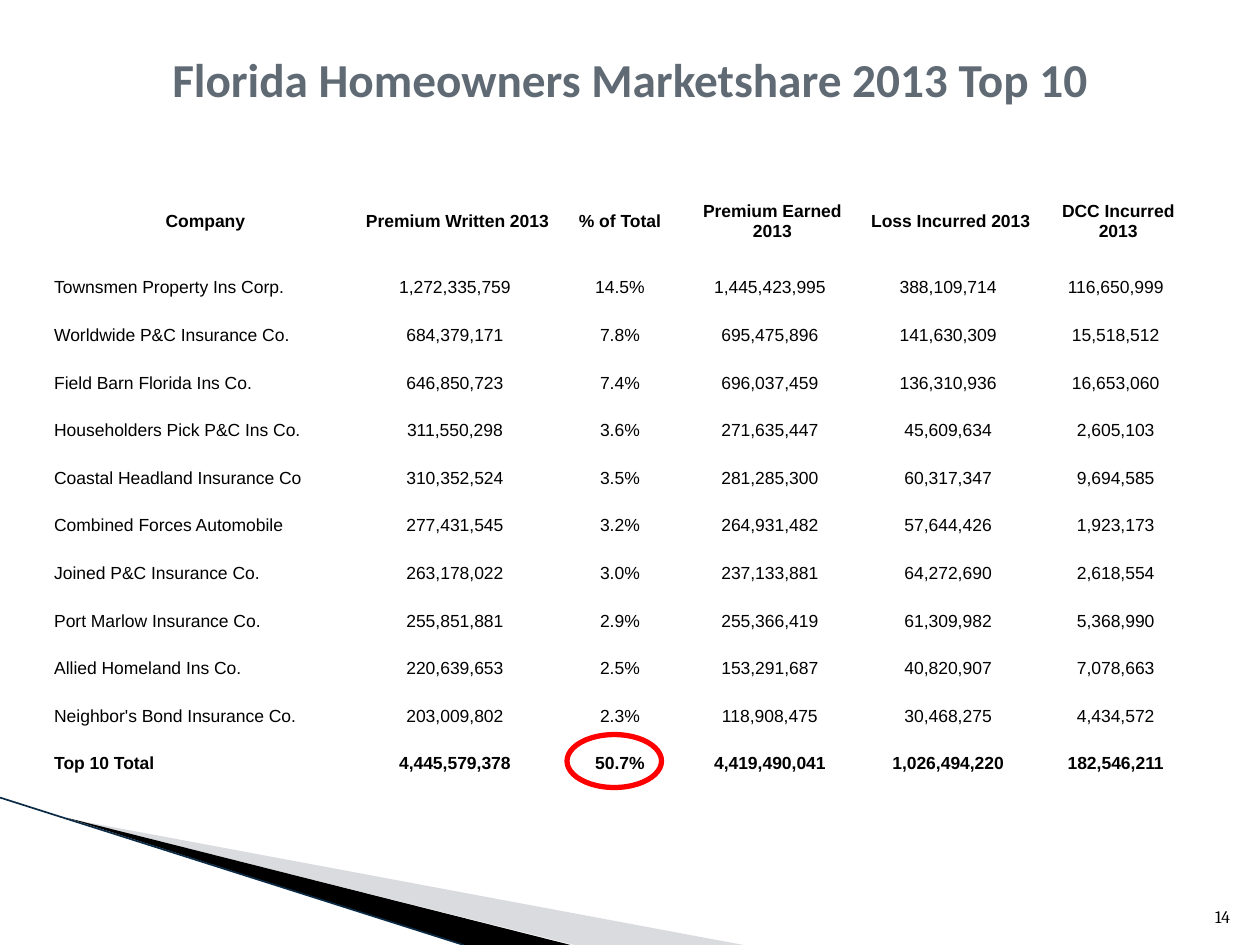
"""Build the Florida homeowners market share slide."""
from dataclasses import dataclass

from lxml.etree import SubElement as Sub
from pptx import Presentation
from pptx.dml.color import RGBColor as Rgb
from pptx.enum.shapes import MSO_CONNECTOR as Link, MSO_SHAPE as Kind
from pptx.enum.text import MSO_ANCHOR as Anchor, PP_ALIGN as Align
from pptx.oxml.ns import qn
from pptx.util import Inches, Pt


@dataclass(frozen=True)
class Theme:
    """Colours, fonts and type sizes."""
    ink: str = "000000"
    slate: str = "606A74"
    mist: str = "A1A6AF"
    navy: str = "0A2A45"
    red: str = "FF0000"
    head: str = "Calibri"
    body: str = "Arial"
    foot: str = "Cambria"
    big: int = 27
    small: int = 10


def unit(num):
    """Turn grid steps of a tenth of an inch into a length."""
    return Inches(num / 10)


def put(frame, text, font, size, tint, bold=False, align=Align.CENTER):
    """Write one formatted paragraph into a text frame."""
    para = frame.paragraphs[0]
    para.alignment = align
    run = para.add_run()
    run.text = text
    run.font.name, run.font.size, run.font.bold = font, Pt(size), bold
    run.font.color.rgb = Rgb.from_string(tint)


class Deck:
    """Hold the style and the current slide."""

    def __init__(self, theme):
        """Open a deck with one title-only slide."""
        self.theme = theme
        self.show = Presentation()
        self.show.slide_width, self.show.slide_height = unit(100), unit(75)
        self.slide = self.show.slides.add_slide(self.show.slide_layouts[5])

    def title(self, text, box):
        """Place and fill the title."""
        shape = self.slide.shapes.title
        shape.left, shape.top, shape.width, shape.height = map(unit, box)
        frame = shape.text_frame
        frame.margin_left = frame.margin_right = unit(3)
        frame.margin_top = frame.margin_bottom = unit(3)
        frame.vertical_anchor = Anchor.MIDDLE
        frame.word_wrap = True
        put(frame, text, self.theme.head, self.theme.big, self.theme.slate, bold=True)

    def wedge(self, points, tint, alpha=100):
        """Draw a filled outline without a border."""
        first, *rest = [(unit(x), unit(y)) for x, y in points]
        pen = self.slide.shapes.build_freeform(*first, scale=1.0)
        pen.add_line_segments(rest, close=True)
        shape = pen.convert_to_shape()
        shape.shadow.inherit = False
        shape.fill.solid()
        shape.fill.fore_color.rgb = Rgb.from_string(tint)
        shape.line.fill.background()
        if alpha < 100:
            tone = next(shape._element.spPr.iter(qn("a:srgbClr")))
            Sub(tone, qn("a:alpha"), val=str(alpha * 1000))

    def line(self, start, end, tint, width):
        """Draw a straight line."""
        link = self.slide.shapes.add_connector(Link.STRAIGHT, *map(unit, start + end))
        link.line.color.rgb = Rgb.from_string(tint)
        link.line.width = Pt(width)
        Sub(link._element.spPr, qn("a:effectLst"))

    def ring(self, box, tint, width):
        """Draw an open ellipse."""
        shape = self.slide.shapes.add_shape(Kind.OVAL, *map(unit, box))
        shape.shadow.inherit = False
        shape.fill.background()
        shape.line.color.rgb = Rgb.from_string(tint)
        shape.line.width = Pt(width)

    def note(self, text, box):
        """Add a right-aligned footer text."""
        frame = self.slide.shapes.add_textbox(*map(unit, box)).text_frame
        frame.word_wrap = True
        frame.vertical_anchor = Anchor.BOTTOM
        put(frame, text, self.theme.foot, self.theme.small, self.theme.ink, align=Align.RIGHT)

    def table(self, rows, box, cols, top):
        """Add a plain table with a bold first and last row."""
        grid = self.slide.shapes.add_table(len(rows), len(cols), *map(unit, box)).table
        grid.first_row = grid.horz_banding = False
        for col, width in zip(grid.columns, cols):
            col.width = unit(width)
        last = len(rows) - 1
        step = (box[3] - top) / last
        for i, row in enumerate(rows):
            grid.rows[i].height = unit(step if i else top)
            for j, text in enumerate(row):
                self.cell(grid.cell(i, j), text, bold=i in (0, last),
                          left=i > 0 and j == 0, count=i > 0 and j not in (0, 2))

    def cell(self, cell, text, bold, left, count):
        """Fill one cell, with counts set slightly left of centre."""
        cell.fill.background()
        cell.margin_left = cell.margin_top = unit(0.1)
        cell.margin_right = unit(0.5 if count else 0.1)
        cell.margin_bottom = 0
        cell.vertical_anchor = Anchor.MIDDLE
        put(cell.text_frame, text, self.theme.body, self.theme.small, self.theme.ink,
            bold=bold, align=Align.LEFT if left else Align.CENTER)


ROWS = [
    ("Company", "Premium Written 2013", "% of Total", "Premium Earned 2013",
     "Loss Incurred 2013", "DCC Incurred 2013"),
    ("Townsmen Property Ins Corp.", "1,272,335,759", "14.5%", "1,445,423,995",
     "388,109,714", "116,650,999"),
    ("Worldwide P&C Insurance Co.", "684,379,171", "7.8%", "695,475,896",
     "141,630,309", "15,518,512"),
    ("Field Barn Florida Ins Co.", "646,850,723", "7.4%", "696,037,459",
     "136,310,936", "16,653,060"),
    ("Householders Pick P&C Ins Co.", "311,550,298", "3.6%", "271,635,447",
     "45,609,634", "2,605,103"),
    ("Coastal Headland Insurance Co", "310,352,524", "3.5%", "281,285,300",
     "60,317,347", "9,694,585"),
    ("Combined Forces Automobile", "277,431,545", "3.2%", "264,931,482",
     "57,644,426", "1,923,173"),
    ("Joined P&C Insurance Co.", "263,178,022", "3.0%", "237,133,881",
     "64,272,690", "2,618,554"),
    ("Port Marlow Insurance Co.", "255,851,881", "2.9%", "255,366,419",
     "61,309,982", "5,368,990"),
    ("Allied Homeland Ins Co.", "220,639,653", "2.5%", "153,291,687",
     "40,820,907", "7,078,663"),
    ("Neighbor's Bond Insurance Co.", "203,009,802", "2.3%", "118,908,475",
     "30,468,275", "4,434,572"),
    ("Top 10 Total", "4,445,579,378", "50.7%", "4,419,490,041",
     "1,026,494,220", "182,546,211"),
]


def main():
    """Compose and save the slide."""
    theme = Theme()
    deck = Deck(theme)
    deck.wedge([(5.5, 65), (59, 75), (45.6, 75)], theme.mist, alpha=40)
    deck.wedge([(5.3, 64.9), (45.3, 75), (36.8, 75)], theme.ink)
    deck.line((0, 63.3), (36.8, 75), theme.navy, 0.95)
    deck.table(ROWS, (4.2, 14.2, 90.8, 48.3), (24.2, 15.8, 10, 14.2, 14.1, 12.5), 6.7)
    deck.title("Florida Homeowners Marketshare 2013 Top 10", (0, 0, 100, 12.5))
    deck.note("14", (94.6, 70.1, 4, 4))
    deck.ring((45, 58.3, 7.5, 4.2), theme.red, 3)
    deck.show.save("out.pptx")


if __name__ == "__main__":
    main()
